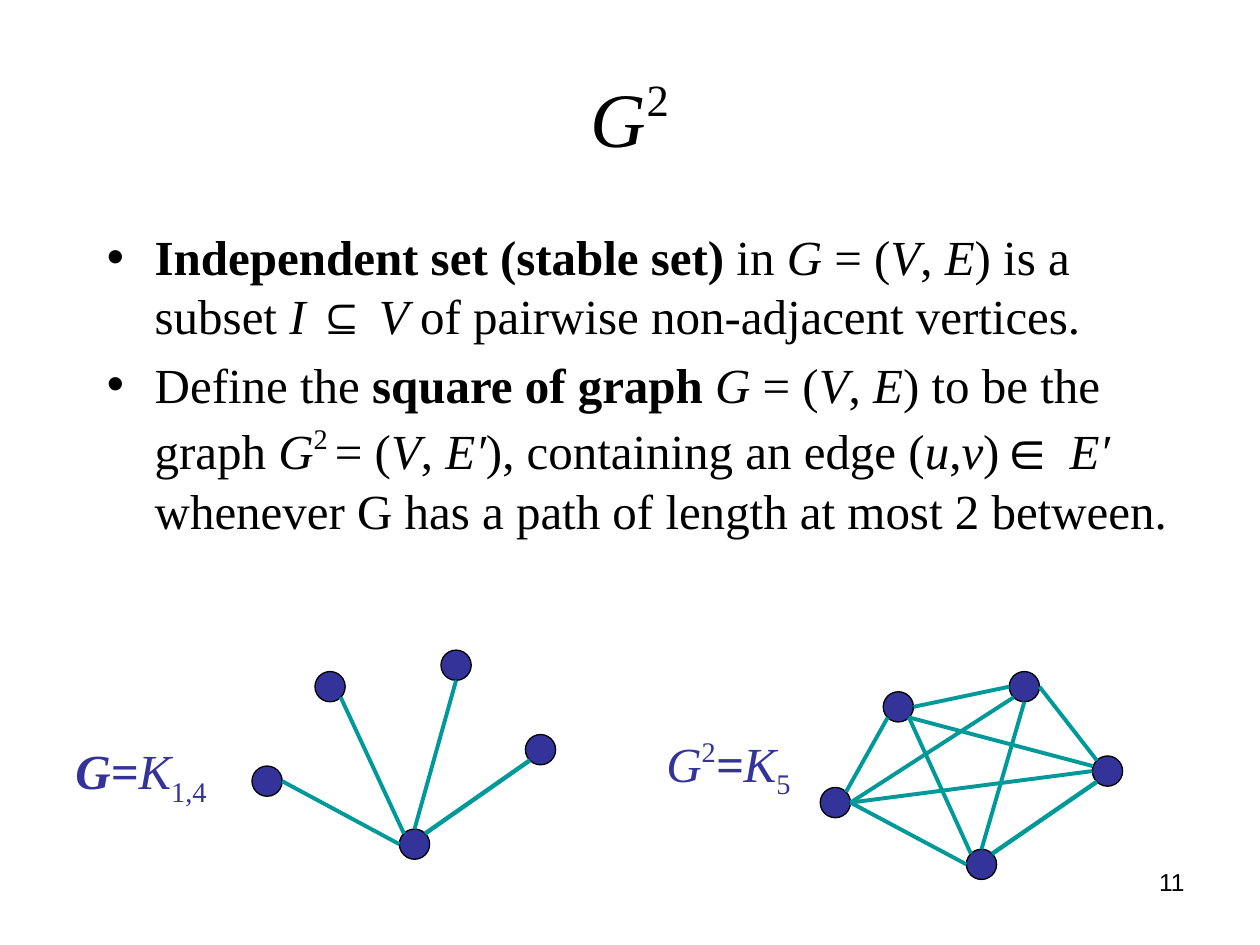
"""Build a slide defining the square of a graph, with K1,4 and its square K5."""
from lxml.etree import SubElement
from pptx import Presentation
from pptx.dml.color import RGBColor
from pptx.enum.shapes import MSO_CONNECTOR, MSO_SHAPE
from pptx.enum.text import MSO_ANCHOR, MSO_AUTO_SIZE, PP_ALIGN
from pptx.oxml.ns import qn
from pptx.util import Inches, Pt

THEME = {
    "serif": "Times New Roman", "sans": "Arial",
    "ink": RGBColor(0, 0, 0), "paper": RGBColor(255, 255, 255),
    "node": RGBColor(0x33, 0x33, 0x99), "edge": RGBColor(0, 0x99, 0x99),
    "title": 44, "body": 28, "symbol": 32, "number": 14,
    "outline": 0.75, "stroke": 2.25, "thick": 2.5,
}
BASELINES = {"^": "40000", "_": "-25000"}

TITLE = [("G", "i"), ("2", "^")]
BULLETS = [
    [("Independent set (stable set) ", "b"), ("in ", ""), ("G ", "i"), ("= (", ""),
     ("V", "i"), (", ", ""), ("E", "i"), (") is a subset ", ""), ("I ", "i"),
     ("⊆ ", ""), ("V ", "i"), ("of pairwise non-adjacent vertices.", "")],
    [("Define the ", ""), ("square of graph ", "b"), ("G ", "i"), ("= (", ""),
     ("V", "i"), (", ", ""), ("E", "i"), (") to be the graph ", ""), ("G", "i"),
     ("2 ", "^"), ("= (", ""), ("V", "i"), (", ", ""), ("E′", "i"),
     ("), containing an edge (", ""), ("u", "i"), (",", ""), ("v", "i"), (")", ""),
     ("∈ ", "b+"), ("E′ ", "i"),
     ("whenever G has a path of length at most 2 between.", "")],
]
LABELS = [
    ((0.5, 5.83, 1.3, 0.58), [("G=", "bi"), ("K", "i"), ("1,4", "_")]),
    ((5.19, 5.77, 1.23, 0.57),
     [("G", "i"), ("2", "^"), ("=", "bi"), ("K", "i"), ("5", "_")]),
]

NODE_SIZE = 0.24
SITES = {
    "n": (0.5, 0), "ne": (0.85, 0.15), "e": (1, 0.5), "se": (0.85, 0.85),
    "s": (0.5, 1), "sw": (0.15, 0.85), "w": (0, 0.5), "nw": (0.15, 0.15),
    "wnw": (0, 0.33),
}
STAR_EDGES = [
    ("hub", "n", "top", "s", "stroke"), ("hub", "ne", "right", "sw", "thick"),
    ("hub", "nw", "upper", "se", "stroke"), ("hub", "w", "left", "e", "stroke"),
]
SQUARE_EDGES = [
    ("top", "w", "upper", "e", "stroke"), ("upper", "sw", "left", "ne", "stroke"),
    ("right", "nw", "top", "e", "stroke"), ("top", "sw", "left", "e", "stroke"),
    ("right", "wnw", "upper", "se", "stroke"), ("right", "w", "left", "e", "stroke"),
]
GRAPHS = [
    ({"top": (3.5, 5.16), "hub": (3.17, 6.58), "right": (4.17, 5.83),
      "upper": (2.5, 5.33), "left": (2, 6.08)}, STAR_EDGES),
    ({"top": (8.01, 5.33), "hub": (7.67, 6.74), "right": (8.67, 6),
      "upper": (7.01, 5.49), "left": (6.51, 6.25)}, STAR_EDGES + SQUARE_EDGES),
]


def write(para, runs, size="body", color="ink", face="serif"):
    for text, marks in runs:
        span = para.add_run()
        span.text = text
        values = {
            "name": THEME[face], "bold": "b" in marks, "italic": "i" in marks,
            "size": Pt(THEME["symbol" if "+" in marks else size]),
        }
        for name, value in values.items():
            setattr(span.font, name, value)
        span.font.color.rgb = THEME[color]
        for mark in BASELINES.keys() & set(marks):
            span._r.get_or_add_rPr().set("baseline", BASELINES[mark])


def add_text(page, place):
    box = page.shapes.add_textbox(*map(Inches, place))
    box.text_frame.word_wrap = True
    return box


def add_title(page):
    title = page.shapes.title
    places = zip(("left", "top", "width", "height"), (0.5, 0.3, 9, 1.25))
    for name, value in places:
        setattr(title, name, Inches(value))
    title.text_frame.vertical_anchor = MSO_ANCHOR.MIDDLE
    para = title.text_frame.paragraphs[0]
    para.alignment = PP_ALIGN.CENTER
    write(para, TITLE, "title")


def add_bullets(page):
    frame = add_text(page, (0.75, 1.75, 8.83, 3.08)).text_frame
    for index, runs in enumerate(BULLETS):
        para = frame.add_paragraph() if index else frame.paragraphs[0]
        para.space_before = Pt(0.2 * THEME["body"])
        properties = para._p.get_or_add_pPr()
        properties.set("marL", str(Inches(0.38)))
        properties.set("indent", str(Inches(-0.38)))
        SubElement(properties, qn("a:buFont"), typeface=THEME["sans"])
        SubElement(properties, qn("a:buChar"), char="•")
        write(para, runs)


def add_label(page, place, runs):
    frame = add_text(page, place).text_frame
    frame.word_wrap = False
    frame.auto_size = MSO_AUTO_SIZE.SHAPE_TO_FIT_TEXT
    write(frame.paragraphs[0], runs, color="node")


def add_graph(page, nodes, edges):
    for left, top in nodes.values():
        node = page.shapes.add_shape(
            MSO_SHAPE.OVAL, *map(Inches, (left, top, NODE_SIZE, NODE_SIZE)))
        node.shadow.inherit = False
        node.fill.solid()
        node.fill.fore_color.rgb = THEME["node"]
        node.line.color.rgb = THEME["ink"]
        node.line.width = Pt(THEME["outline"])

    def site(name, side):
        return [Inches(start + NODE_SIZE * part)
                for start, part in zip(nodes[name], SITES[side])]

    for start, start_side, end, end_side, weight in edges:
        edge = page.shapes.add_connector(
            MSO_CONNECTOR.STRAIGHT, *site(start, start_side), *site(end, end_side))
        edge.line.color.rgb = THEME["edge"]
        edge.line.width = Pt(THEME[weight])
        SubElement(edge._element.spPr, qn("a:effectLst"))


def main():
    deck = Presentation()
    deck.slide_width, deck.slide_height = Inches(10), Inches(7.5)
    page = deck.slides.add_slide(deck.slide_layouts[5])
    page.background.fill.solid()
    page.background.fill.fore_color.rgb = THEME["paper"]
    add_title(page)
    add_bullets(page)
    for nodes, edges in GRAPHS:
        add_graph(page, nodes, edges)
    for place, runs in LABELS:
        add_label(page, place, runs)
    number = add_text(page, (7.17, 6.83, 2.33, 0.52)).text_frame.paragraphs[0]
    number.alignment = PP_ALIGN.RIGHT
    write(number, [("11", "")], "number", face="sans")
    deck.save("out.pptx")


if __name__ == "__main__":
    main()
